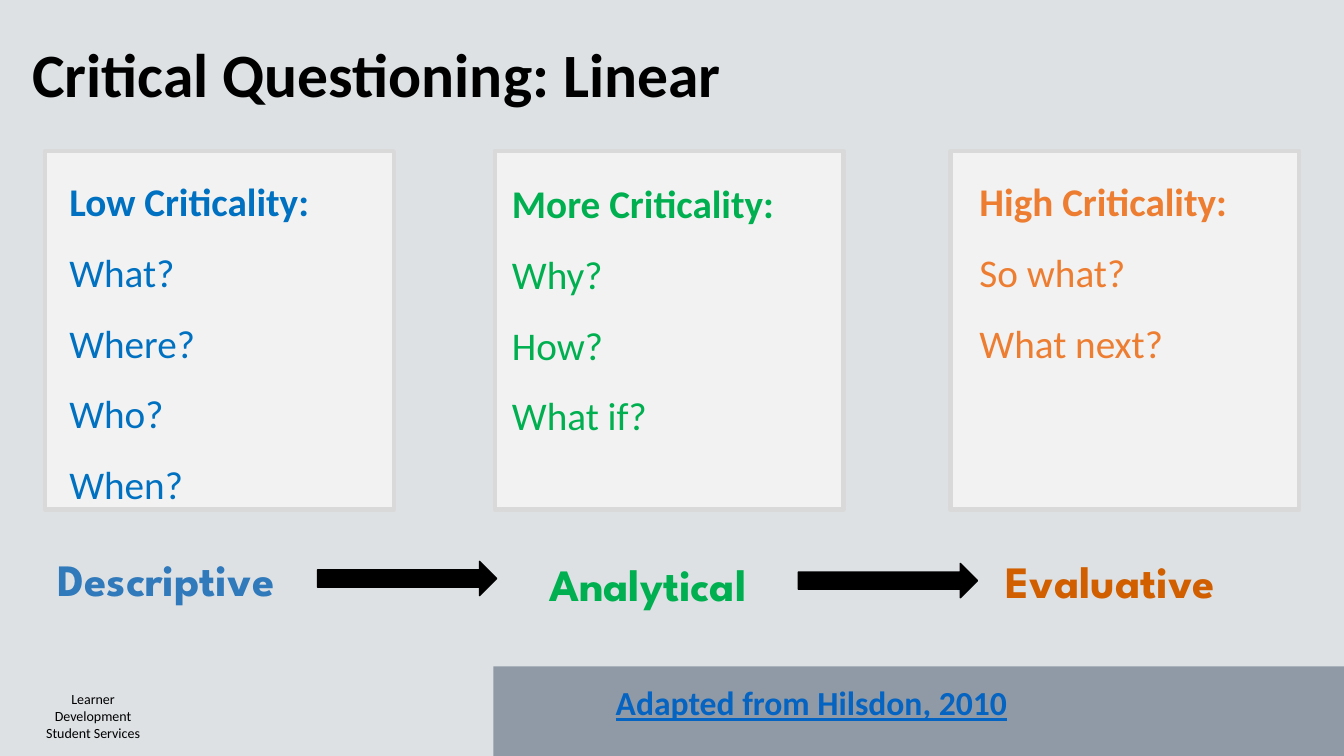
from dataclasses import dataclass

from pptx import Presentation
from pptx.dml.color import RGBColor
from pptx.enum.shapes import MSO_SHAPE as SHAPE
from pptx.enum.text import MSO_ANCHOR as ANCHOR, PP_ALIGN as ALIGN
from pptx.util import Pt


@dataclass(frozen=True)
class Theme:
    # Colours
    page: str = "DDE1E4"
    band: str = "8F9AA6"
    card: str = "F2F2F2"
    border: str = "D9D9D9"
    ink: str = "000000"
    link: str = "0563C1"
    low: str = "0070C0"
    more: str = "00B050"
    high: str = "ED7D31"
    descriptive: str = "3079BB"
    evaluative: str = "D15F00"
    # Fonts and sizes
    body_font: str = "Calibri"
    stage_font: str = "League Spartan"
    title: int = 44
    stage: int = 32
    body: int = 28
    source: int = 24
    footer: int = 10


def write(tf, lines, *, size, color, font, bold=False, bold_first=False,
          underline=None, align=ALIGN.LEFT, spacing=1.0):
    """Fill a text frame with one paragraph per line."""
    for i, line in enumerate(lines):
        p = tf.paragraphs[0] if i == 0 else tf.add_paragraph()
        p.alignment, p.line_spacing = align, spacing
        r = p.add_run()
        r.text = line
        f = r.font
        f.name, f.size, f.underline = font, Pt(size), underline
        f.bold = bold or (bold_first and i == 0)
        f.color.rgb = RGBColor.from_string(color)


class SlideBuilder:
    def __init__(self, slide, theme):
        self.s, self.theme = slide, theme

    def background(self, color):
        fill = self.s.background.fill
        fill.solid()
        fill.fore_color.rgb = RGBColor.from_string(color)

    def shape(self, kind, x, y, w, h, fill, line=None, weight=1):
        sp = self.s.shapes.add_shape(kind, Pt(x), Pt(y), Pt(w), Pt(h))
        sp.shadow.inherit = False
        sp.fill.solid()
        sp.fill.fore_color.rgb = RGBColor.from_string(fill)
        if line:
            sp.line.color.rgb = RGBColor.from_string(line)
            sp.line.width = Pt(weight)
        else:
            sp.line.fill.background()

    def text(self, x, y, w, h, lines, anchor=ANCHOR.TOP, inset=None, **style):
        tf = self.s.shapes.add_textbox(Pt(x), Pt(y), Pt(w), Pt(h)).text_frame
        tf.word_wrap = True
        tf.vertical_anchor = anchor
        if inset is not None:
            tf.margin_left = tf.margin_right = Pt(inset)
            tf.margin_top = tf.margin_bottom = Pt(inset)
        write(tf, lines, **{"font": self.theme.body_font, **style})

    def card(self, x, text_x, text_y, text_w, lines, color):
        t = self.theme
        self.shape(SHAPE.RECTANGLE, x, 108, 249, 256, t.card, t.border, 3)
        self.text(text_x, text_y, text_w, 256, lines, size=t.body,
                  color=color, bold_first=True, spacing=1.5)

    def stage(self, x, y, w, label, color):
        t = self.theme
        self.text(x, y, w, 44, [label], ANCHOR.MIDDLE, 3, size=t.stage,
                  color=color, font=t.stage_font, bold=True,
                  align=ALIGN.CENTER, spacing=1.5)

    def arrow(self, x, y):
        ink = self.theme.ink
        self.shape(SHAPE.RIGHT_ARROW, x, y, 128, 24.5, ink, ink)


def main():
    prs = Presentation()
    prs.slide_width, prs.slide_height = Pt(960), Pt(540)
    t = Theme()
    b = SlideBuilder(prs.slides.add_slide(prs.slide_layouts[6]), t)

    # Page, footer band and department name
    b.background(t.page)
    b.shape(SHAPE.RECTANGLE, 352.5, 476, 607.5, 64, t.band)
    b.text(16.5, 489.6, 100, 44, ["Learner Development", "Student Services"],
           size=t.footer, color=t.ink, align=ALIGN.CENTER)

    # Title
    b.text(16, 12, 922, 86.5, ["Critical Questioning: Linear"], ANCHOR.MIDDLE,
           size=t.title, color=t.ink, bold=True, spacing=0.9)

    # Question cards
    b.card(32.4, 42.5, 106.6, 221,
           ["Low Criticality:", "What?", "Where?", "Who?", "When?"], t.low)
    b.card(353.5, 358.6, 108, 229,
           ["More Criticality:", "Why?", "How?", "What if?"], t.more)
    b.card(679, 692.6, 106.6, 221,
           ["High Criticality:", "So what?", "What next?"], t.high)

    # Stages joined by arrows
    b.stage(18.7, 381.6, 200, "Descriptive", t.descriptive)
    b.stage(375.8, 385.2, 174, "Analytical", t.more)
    b.stage(706.3, 383, 174, "Evaluative", t.evaluative)
    b.arrow(226.8, 401)
    b.arrow(570.2, 402.5)

    # Source
    b.text(432.7, 483.8, 310, 36, ["Adapted from Hilsdon, 2010"],
           size=t.source, color=t.link, bold=True, underline=True)

    prs.save("out.pptx")


if __name__ == "__main__":
    main()
